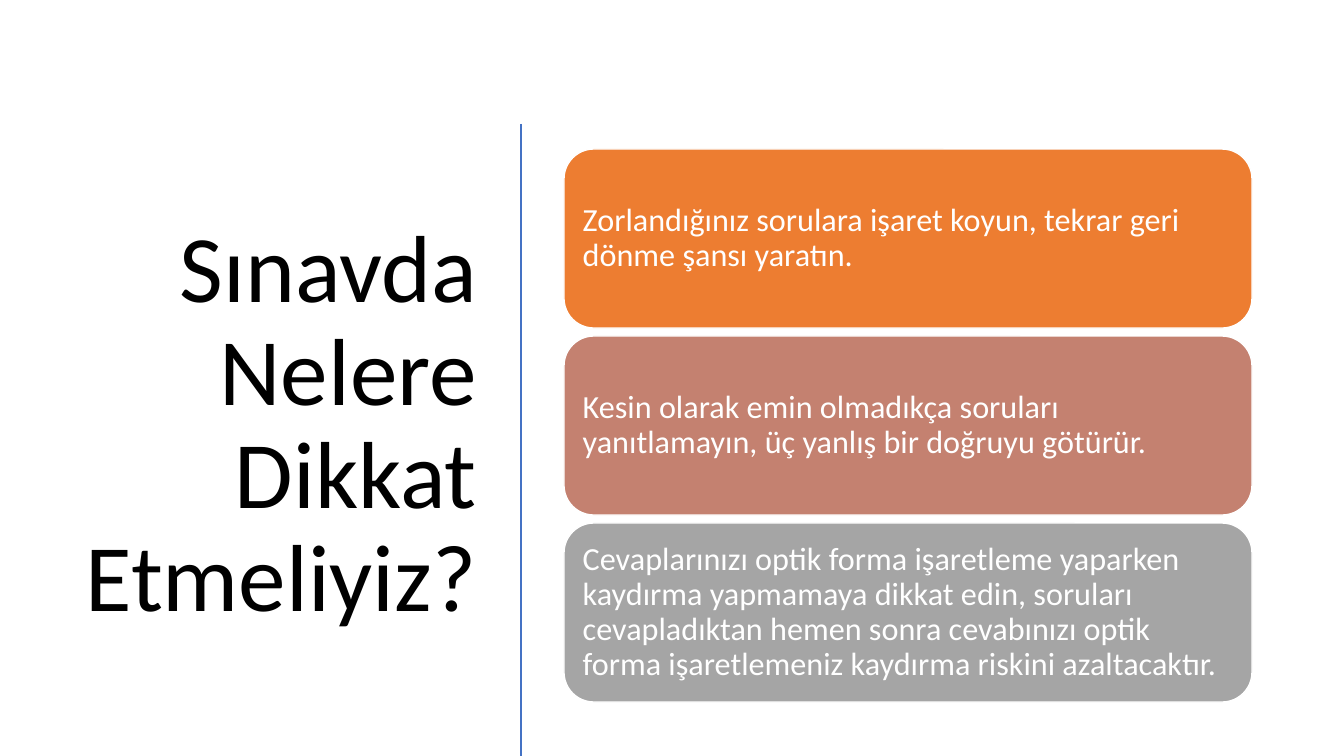
from pptx import Presentation
from pptx.dml.color import RGBColor
from pptx.enum.shapes import MSO_CONNECTOR, MSO_SHAPE
from pptx.enum.text import MSO_ANCHOR, PP_ALIGN
from pptx.oxml.ns import qn
from pptx.util import Pt
from lxml import etree

PX = 914400 / 100.8
LEFT, RIGHT = PP_ALIGN.LEFT, PP_ALIGN.RIGHT
MIDDLE = MSO_ANCHOR.MIDDLE
ROUND = MSO_SHAPE.ROUNDED_RECTANGLE
STRAIGHT = MSO_CONNECTOR.STRAIGHT

BLACK = RGBColor(0x00, 0x00, 0x00)
WHITE = RGBColor(0xFF, 0xFF, 0xFF)
BLUE = RGBColor(0x44, 0x72, 0xC4)
ORANGE = RGBColor(0xED, 0x7D, 0x31)
ROSE = RGBColor(0xC4, 0x81, 0x70)
GRAY = RGBColor(0xA5, 0xA5, 0xA5)

TIPS = [
    (ORANGE, "Zorlandığınız sorulara işaret koyun, tekrar geri dönme şansı yaratın."),
    (ROSE, "Kesin olarak emin olmadıkça soruları yanıtlamayın, "
           "üç yanlış bir doğruyu götürür."),
    (GRAY, "Cevaplarınızı optik forma işaretleme yaparken kaydırma yapmamaya "
           "dikkat edin, soruları cevapladıktan hemen sonra cevabınızı optik "
           "forma işaretlemeniz kaydırma riskini azaltacaktır."),
]
TIP_TOP, TIP_STEP = 149, 187


def px(*nums):
    """Turn pixel lengths into EMU."""
    return [round(n * PX) for n in nums]


def write(shape, text, size, color, align):
    frame = shape.text_frame
    inset, = px(10)
    layout = {"word_wrap": True, "vertical_anchor": MIDDLE,
              "margin_left": inset, "margin_right": inset,
              "margin_top": inset, "margin_bottom": inset}
    for name, value in layout.items():
        setattr(frame, name, value)
    para = frame.paragraphs[0]
    para.alignment = align
    para.line_spacing = 0.9
    run = para.add_run()
    run.text = text
    for name, value in {"name": "Calibri", "size": Pt(size)}.items():
        setattr(run.font, name, value)
    run.font.color.rgb = color


prs = Presentation()
prs.slide_width, prs.slide_height = px(1344, 756)
slide = prs.slides.add_slide(prs.slide_layouts[6])
shapes = slide.shapes

title = shapes.add_textbox(*px(52, 118, 435, 616))
write(title, "Sınavda Nelere Dikkat Etmeliyiz?", 68, BLACK, RIGHT)

rule = shapes.add_connector(STRAIGHT, *px(521, 124, 521, 756))
rule.line.color.rgb = BLUE
rule.line.width = Pt(2)
etree.SubElement(rule._element.spPr, qn("a:effectLst"))

for i, (fill, text) in enumerate(TIPS):
    tip = shapes.add_shape(ROUND, *px(564, TIP_TOP + i * TIP_STEP, 688, 179))
    tip.shadow.inherit = False
    tip.fill.solid()
    tip.fill.fore_color.rgb = fill
    tip.line.color.rgb = WHITE
    tip.line.width = Pt(1)
    write(tip, text, 23, WHITE, LEFT)

prs.save("out.pptx")
